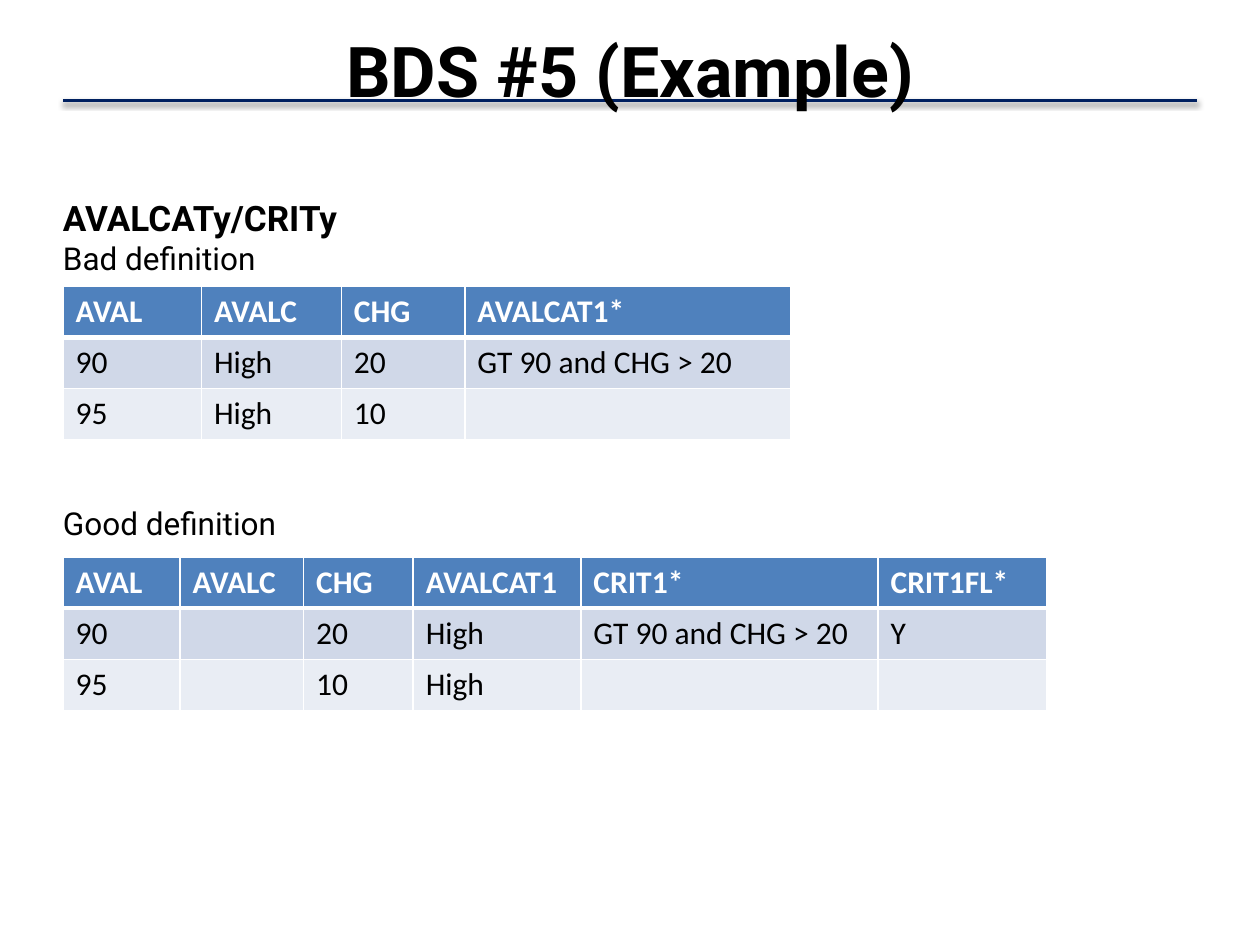
from dataclasses import dataclass

import pptx
import pptx.dml.color
import pptx.enum.shapes
import pptx.enum.text
import pptx.oxml
import pptx.oxml.ns
import pptx.util
from pptx.util import Cm, Pt


@dataclass(frozen=True)
class Theme:
    heading_font: str = "Roboto"
    table_font: str = "Calibri"
    text: str = "000000"
    light: str = "FFFFFF"
    rule: str = "002060"
    header_fill: str = "4F81BD"
    band_fills: tuple = ("D0D8E8", "E9EDF4")
    title_size: int = 40
    topic_size: int = 20
    body_size: int = 18


THEME = Theme()
MARGIN, CONTENT_WIDTH = 1.27, 22.86
ROW_HEIGHT = 1.03

BAD_COLUMNS = (2.79, 2.82, 2.49, 6.58)
BAD_ROWS = (
    ("AVAL", "AVALC", "CHG", "AVALCAT1*"),
    ("90", "High", "20", "GT 90 and CHG > 20"),
    ("95", "High", "10", ""),
)
GOOD_COLUMNS = (2.36, 2.49, 2.21, 3.38, 5.99, 3.4)
GOOD_ROWS = (
    ("AVAL", "AVALC", "CHG", "AVALCAT1", "CRIT1*", "CRIT1FL*"),
    ("90", "", "20", "High", "GT 90 and CHG > 20", "Y"),
    ("95", "", "10", "High", "", ""),
)


def rgb(color):
    return pptx.dml.color.RGBColor.from_string(color)


def parse_drawing(xml):
    return pptx.oxml.parse_xml(xml.replace(">", f" {pptx.oxml.ns.nsdecls('a')}>", 1))


def add_run(paragraph, text, size, font, color=THEME.text, bold=False):
    run = paragraph.add_run()
    run.text = text
    run.font.size = Pt(size)
    run.font.name = font
    run.font.bold = bold
    run.font.color.rgb = rgb(color)


def add_text_frame(slide, left, top, width, height):
    box = slide.shapes.add_textbox(Cm(left), Cm(top), Cm(width), Cm(height))
    box.text_frame.word_wrap = True
    return box.text_frame


def add_title(slide, left, top, width, height):
    # Rule along the bottom of the title, with a soft shadow below it
    rule_y = Cm(top + height)
    rule = slide.shapes.add_connector(
        pptx.enum.shapes.MSO_CONNECTOR.STRAIGHT,
        Cm(left), rule_y, Cm(left + width), rule_y)
    rule.line.color.rgb = rgb(THEME.rule)
    rule.line.width = Pt(2)
    rule._element.spPr.append(parse_drawing(
        f'<a:effectLst><a:outerShdw blurRad="{Pt(3.1)}" dist="{Pt(1.6)}" '
        'dir="5400000" rotWithShape="0"><a:srgbClr val="000000">'
        '<a:alpha val="38000"/></a:srgbClr></a:outerShdw></a:effectLst>'))

    # Title text
    frame = add_text_frame(slide, left, top, width, height)
    frame.vertical_anchor = pptx.enum.text.MSO_ANCHOR.MIDDLE
    title = frame.paragraphs[0]
    title.alignment = pptx.enum.text.PP_ALIGN.CENTER
    add_run(title, "BDS #5 (Example)", THEME.title_size, THEME.heading_font, bold=True)


def set_borders(cell, top_width, bottom_width):
    widths = {"lnL": 1, "lnR": 1, "lnT": top_width, "lnB": bottom_width}
    for side, width in widths.items():
        cell._tc.get_or_add_tcPr().append(parse_drawing(
            f'<a:{side} w="{Pt(width)}"><a:solidFill>'
            f'<a:srgbClr val="{THEME.light}"/></a:solidFill></a:{side}>'))


def add_definition_table(slide, left, top, columns, rows):
    table = slide.shapes.add_table(
        len(rows), len(columns), Cm(left), Cm(top),
        Cm(sum(columns)), Cm(ROW_HEIGHT * len(rows))).table
    for column, width in zip(table.columns, columns):
        column.width = Cm(width)
    for row_index, row in enumerate(rows):
        is_header = row_index == 0
        fill = THEME.header_fill if is_header else THEME.band_fills[(row_index - 1) % 2]
        color = THEME.light if is_header else THEME.text
        for column_index, value in enumerate(row):
            cell = table.cell(row_index, column_index)
            set_borders(cell, 3 if row_index == 1 else 1, 3 if is_header else 1)
            cell.fill.solid()
            cell.fill.fore_color.rgb = rgb(fill)
            paragraph = cell.text_frame.paragraphs[0]
            if value:
                add_run(paragraph, value, THEME.body_size, THEME.table_font,
                        color, is_header)
            else:
                paragraph.font.size = Pt(THEME.body_size)


def add_definition_labels(slide, left, top, width, height):
    frame = add_text_frame(slide, left, top, width, height)
    add_run(frame.paragraphs[0], "AVALCATy/CRITy", THEME.topic_size,
            THEME.heading_font, bold=True)
    # The second label is spaced to clear the first table
    for label, gap in (("Bad definition", 0), ("Good definition", 130)):
        paragraph = frame.add_paragraph()
        paragraph.space_before = Pt(gap)
        add_run(paragraph, label, THEME.body_size, THEME.heading_font)


def main():
    presentation = pptx.Presentation()
    presentation.slide_width, presentation.slide_height = Cm(25.4), Cm(19.05)
    slide = presentation.slides.add_slide(presentation.slide_layouts[6])

    add_title(slide, MARGIN, 0.76, CONTENT_WIDTH, 1.27)
    add_definition_table(slide, MARGIN, 5.77, BAD_COLUMNS, BAD_ROWS)
    add_definition_table(slide, MARGIN, 11.23, GOOD_COLUMNS, GOOD_ROWS)
    add_definition_labels(slide, 1.02, 3.84, CONTENT_WIDTH, 11.89)

    presentation.save("out.pptx")


if __name__ == "__main__":
    main()
